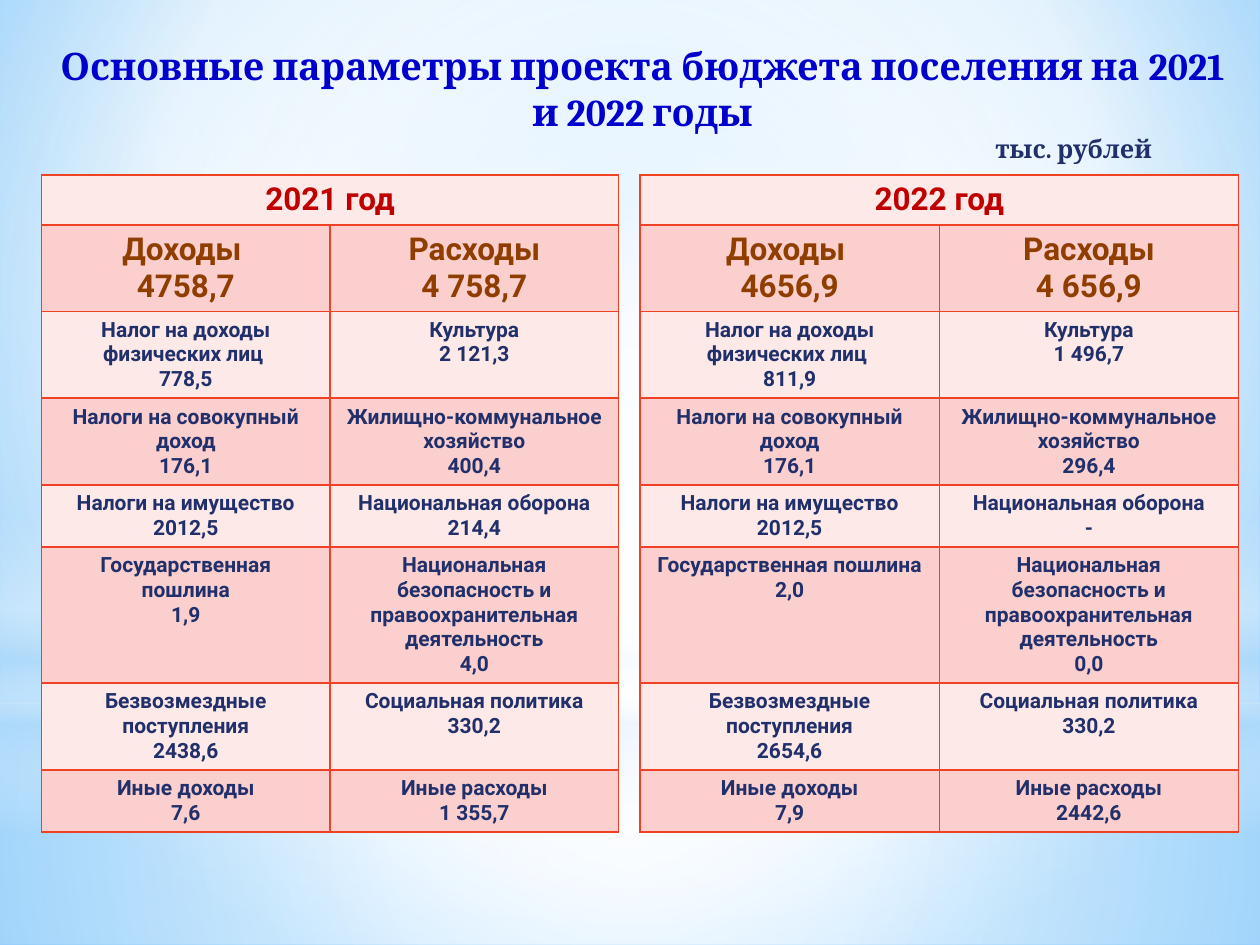
import dataclasses
import typing

import lxml.etree
import pptx
import pptx.dml.color
import pptx.enum.shapes
import pptx.enum.text
import pptx.oxml.ns
import pptx.util

qn = pptx.oxml.ns.qn
Inches = pptx.util.Inches
CENTER = pptx.enum.text.PP_ALIGN.CENTER
WIDTH, HEIGHT = 10, 7.5


@dataclasses.dataclass(frozen=True)
class Theme:
    title_font: str = "Cambria"
    table_font: str = "Roboto"
    title: str = "0000CC"
    text: str = "21306A"
    year: str = "C00000"
    total: str = "903E00"
    border: str = "F14124"
    bands: tuple[str, str] = ("FCE9E8", "FACFCD")
    title_size: float = 21.6
    unit_size: float = 14.4
    heading_size: float = 18
    body_size: float = 12
    border_width: float = 1


class Stop(typing.NamedTuple):
    position: int
    color: str
    opacity: int = 100


class Glow(typing.NamedTuple):
    shape: pptx.enum.shapes.MSO_SHAPE
    top: float
    height: float
    stops: list[Stop]
    linear: bool = False


class BudgetItem(typing.NamedTuple):
    income: str
    expense: str
    height: float


class YearBudget(typing.NamedTuple):
    year: str
    left: float
    width: float
    values: list[tuple[str, str]]


THEME = Theme()
RECTANGLE = pptx.enum.shapes.MSO_SHAPE.RECTANGLE
OVAL = pptx.enum.shapes.MSO_SHAPE.OVAL
TABLE_TOP = 1.39
YEAR_ROW_HEIGHT = 0.39

BACKGROUND = [Stop(0, "9ED5FF"), Stop(60, "FFFFFF"), Stop(100, "5BB9FF")]
GLOWS = [
    Glow(RECTANGLE, 5.58, 1.92,
         [Stop(0, "FFFFFF", 91), Stop(37, "FFFFFF", 76), Stop(100, "B4DCFA", 79)]),
    Glow(RECTANGLE, 0, 5.58,
         [Stop(0, "FFFFFF", 89), Stop(48, "FFFFFF", 62), Stop(100, "B4DCFA", 79)]),
    Glow(RECTANGLE, 4.12, 2.5,
         [Stop(0, "FFFFFF", 0), Stop(29, "FFFFFF", 30), Stop(45, "B4DCFA", 40),
          Stop(55, "FFFFFF", 26), Stop(65, "B4DCFA", 60), Stop(100, "FFFFFF", 0)], True),
    Glow(OVAL, 1.75, 5.58, [Stop(0, "FFFFFF"), Stop(56, "FFFFFF", 0)]),
]
ITEMS = [
    BudgetItem("Доходы ", "Расходы", 0.68),
    BudgetItem("Налог на доходы физических лиц ", "Культура", 0.69),
    BudgetItem("Налоги на совокупный доход", "Жилищно-коммунальное хозяйство", 0.69),
    BudgetItem("Налоги на имущество", "Национальная оборона", 0.49),
    BudgetItem("Государственная пошлина",
               "Национальная безопасность и правоохранительная деятельность", 1.08),
    BudgetItem("Безвозмездные поступления", "Социальная политика", 0.69),
    BudgetItem("Иные доходы", "Иные расходы", 0.49),
]
BUDGETS = [
    YearBudget("2021 год", 0.33, 4.58, [
        ("4758,7", "4 758,7"), ("778,5", "2 121,3"), ("176,1", "400,4"),
        ("2012,5", "214,4"), ("1,9", "4,0"), ("2438,6", "330,2"), ("7,6", "1 355,7")]),
    YearBudget("2022 год", 5.08, 4.75, [
        ("4656,9", "4 656,9"), ("811,9", "1 496,7"), ("176,1", "296,4"),
        ("2012,5", "-"), ("2,0", "0,0"), ("2654,6", "330,2"), ("7,9", "2442,6")]),
]


def gradient(stops: list[Stop], focus: tuple[int, int, int, int] = (50, 50, 50, 50),
             linear: bool = False):
    fill = lxml.etree.Element(qn("a:gradFill"), rotWithShape="1")
    stop_list = lxml.etree.SubElement(fill, qn("a:gsLst"))
    for stop in stops:
        mark = lxml.etree.SubElement(stop_list, qn("a:gs"), pos=str(stop.position * 1000))
        color = lxml.etree.SubElement(mark, qn("a:srgbClr"), val=stop.color)
        if stop.opacity < 100:
            lxml.etree.SubElement(color, qn("a:alpha"), val=str(stop.opacity * 1000))
    if linear:
        lxml.etree.SubElement(fill, qn("a:lin"), ang="5400000", scaled="0")
    else:
        circle = lxml.etree.SubElement(fill, qn("a:path"), {"path": "circle"})
        sides = {side: str(share * 1000) for side, share in zip("ltrb", focus)}
        lxml.etree.SubElement(circle, qn("a:fillToRect"), sides)
    return fill


def replace_solid(parent, fill) -> None:
    parent.replace(parent.find(qn("a:solidFill")), fill)


def draw_backdrop(page) -> None:
    page.background.fill.solid()
    replace_solid(page.element.find(".//" + qn("p:bgPr")),
                  gradient(BACKGROUND, (20, 10, 20, 60)))
    for glow in GLOWS:
        shape = page.shapes.add_shape(glow.shape, 0, Inches(glow.top),
                                      Inches(WIDTH), Inches(glow.height))
        shape.shadow.inherit = False
        shape.line.fill.background()
        shape.fill.solid()
        replace_solid(shape.element.spPr, gradient(glow.stops, linear=glow.linear))


def format_paragraph(para, font: str, size: float, color: str) -> None:
    para.alignment = CENTER
    for span in para.runs:
        span.font.name = font
        span.font.size = pptx.util.Pt(size)
        span.font.bold = True
        span.font.color.rgb = pptx.dml.color.RGBColor.from_string(color)


def draw_title(page) -> None:
    title = page.shapes.title
    title.left, title.top = Inches(0.35), Inches(0.29)
    title.width, title.height = Inches(9.5), Inches(0.63)
    frame = title.text_frame
    frame.text = "Основные параметры проекта бюджета поселения на 2021 и 2022 годы\nтыс. рублей"
    frame.word_wrap = True
    frame.auto_size = pptx.enum.text.MSO_AUTO_SIZE.NONE
    frame.vertical_anchor = pptx.enum.text.MSO_ANCHOR.TOP
    heading, unit = frame.paragraphs
    format_paragraph(heading, THEME.title_font, THEME.title_size, THEME.title)
    format_paragraph(unit, THEME.title_font, THEME.unit_size, THEME.text)
    for para in frame.paragraphs:
        para.space_before = pptx.util.Pt(0)
    unit.alignment = pptx.enum.text.PP_ALIGN.LEFT
    unit._p.get_or_add_pPr().set("marL", str(Inches(7.45)))
    page.shapes.element.append(title.element)


def fill_cell(cell, text: str, size: float, color: str, band: int) -> None:
    cell.text_frame.text = text
    for para in cell.text_frame.paragraphs:
        format_paragraph(para, THEME.table_font, size, color)
    cell.fill.solid()
    cell.fill.fore_color.rgb = pptx.dml.color.RGBColor.from_string(THEME.bands[band])
    properties = cell._tc.get_or_add_tcPr()
    for index, side in enumerate("LRTB"):
        line = lxml.etree.Element(qn("a:ln" + side), w=str(pptx.util.Pt(THEME.border_width)))
        paint = lxml.etree.SubElement(line, qn("a:solidFill"))
        lxml.etree.SubElement(paint, qn("a:srgbClr"), val=THEME.border)
        properties.insert(index, line)


def draw_budget(page, budget: YearBudget) -> None:
    heights = [YEAR_ROW_HEIGHT] + [item.height for item in ITEMS]
    table = page.shapes.add_table(len(heights), 2, Inches(budget.left), Inches(TABLE_TOP),
                                  Inches(budget.width), Inches(sum(heights))).table
    for row, height in zip(table.rows, heights):
        row.height = Inches(height)
    table.cell(0, 0).merge(table.cell(0, 1))
    for column, text in enumerate((budget.year, "")):
        fill_cell(table.cell(0, column), text, THEME.heading_size, THEME.year, 0)
    for row, (item, values) in enumerate(zip(ITEMS, budget.values), start=1):
        size, color = ((THEME.heading_size, THEME.total) if row == 1
                       else (THEME.body_size, THEME.text))
        for column, (label, value) in enumerate(zip((item.income, item.expense), values)):
            fill_cell(table.cell(row, column), f"{label}\n{value}", size, color, row % 2)


def main() -> None:
    deck = pptx.Presentation()
    deck.slide_width, deck.slide_height = Inches(WIDTH), Inches(HEIGHT)
    page = deck.slides.add_slide(deck.slide_layouts.get_by_name("Title Only"))
    draw_backdrop(page)
    draw_title(page)
    for budget in BUDGETS:
        draw_budget(page, budget)
    deck.save("out.pptx")


if __name__ == "__main__":
    main()
